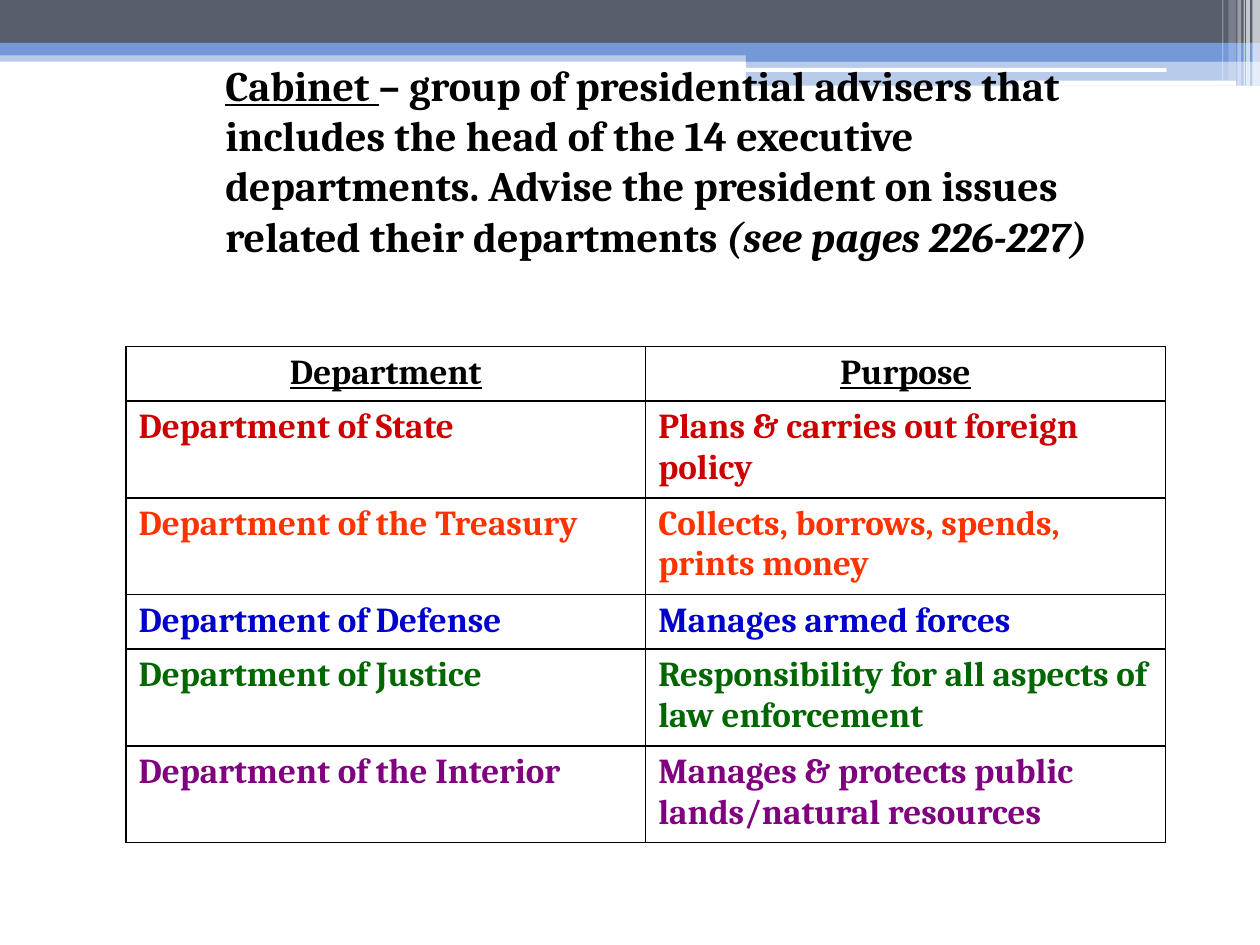
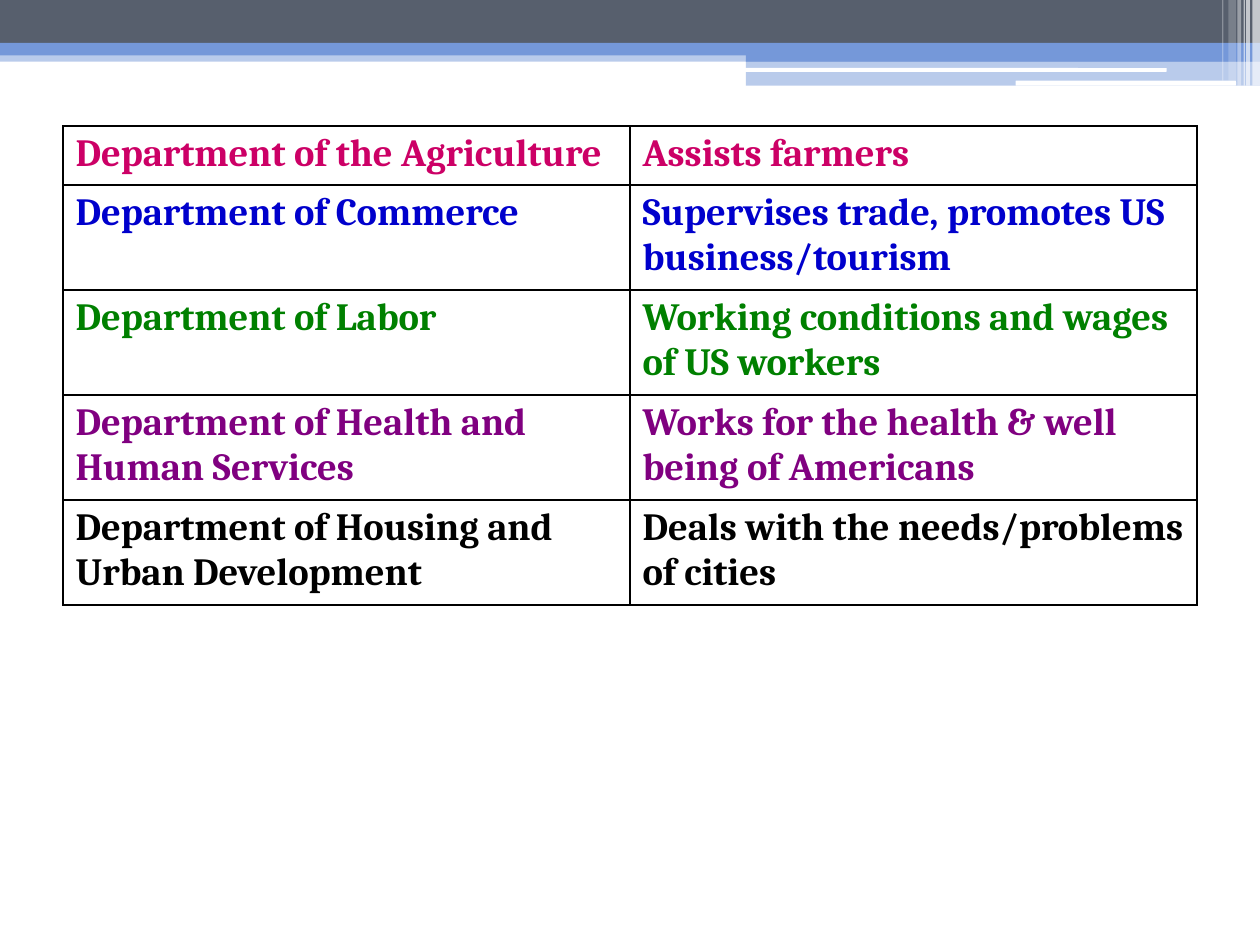
"""Build two slides that list the cabinet departments and their purposes."""
from dataclasses import dataclass

from lxml.etree import SubElement
from pptx import Presentation
from pptx.dml.color import RGBColor
from pptx.enum.shapes import MSO_SHAPE as Preset
from pptx.enum.text import MSO_ANCHOR as Anchor, PP_ALIGN as Align
from pptx.oxml.ns import qn
from pptx.slide import Slide
from pptx.table import _Cell as Cell
from pptx.text.text import _Paragraph as Paragraph
from pptx.util import Pt

FONT = "Cambria"
PAGE_WIDTH, PAGE_HEIGHT = 720, 540
ROW_HEIGHT = 26.64
COLORS = {
    "slate": "575F6D", "blue": "7598D9", "white": "FFFFFF", "black": "000000",
    "red": "CC0000", "orange": "FF3300", "navy": "0000CC", "forest": "006600",
    "purple": "800080", "pink": "CC0066", "green": "008000",
}


@dataclass(frozen=True)
class Band:
    left: float
    top: float
    width: float
    height: float
    color: str = "white"
    opacity: int = 100
    rounded: bool = False


@dataclass(frozen=True)
class Span:
    text: str
    size: float
    color: str = "black"
    underline: bool = False
    italic: bool = False


@dataclass(frozen=True)
class Department:
    name: str
    purpose: str
    color: str
    heading: bool = False


@dataclass(frozen=True)
class Grid:
    left: float
    top: float
    width: float
    size: float
    rows: tuple[Department, ...]


BANDS = (
    Band(0, 28.8, PAGE_WIDTH, 6.48, "blue", 50),
    Band(0, 0, PAGE_WIDTH, 24.48, "slate"),
    Band(0, 24.48, PAGE_WIDTH, 7.2, "blue"),
    Band(426.24, 28.08, 293.76, 7.2, "blue"),
    Band(426.24, 34.56, 293.76, 14.4, "blue", 50),
    Band(425.52, 38.88, 241.2, 2.16, rounded=True),
    Band(580.32, 46.08, 126, 2.88, rounded=True),
    Band(715.68, 0, 4.32, 48.96, opacity=65),
    Band(712.08, 0, 2.16, 48.96, opacity=65),
    Band(710.64, 0, 0.72, 48.96, opacity=60),
    Band(707.04, 0, 2.16, 48.96, opacity=40),
    Band(702, 0, 4.32, 46.08, opacity=20),
    Band(698.4, 0, 0.72, 46.08, opacity=30),
)
DEFINITION = (
    Span("Cabinet ", 24, underline=True),
    Span("– group of presidential advisers that includes the head of the 14 executive "
         "departments. Advise the president on issues related their departments ", 24),
    Span("(see pages 226-227)", 24, italic=True),
)
FIRST_GRID = Grid(72, 198, 594, 20, (
    Department("Department", "Purpose", "black", heading=True),
    Department("Department of State", "Plans & carries out foreign policy", "red"),
    Department("Department of the Treasury", "Collects, borrows, spends, prints money", "orange"),
    Department("Department of Defense", "Manages armed forces", "navy"),
    Department("Department of Justice", "Responsibility for all aspects of law enforcement", "forest"),
    Department("Department of the Interior", "Manages & protects public lands/natural resources", "purple"),
))
SECOND_GRID = Grid(36, 72, 648, 22, (
    Department("Department of the Agriculture", "Assists farmers", "pink"),
    Department("Department of Commerce", "Supervises trade, promotes US business/tourism", "navy"),
    Department("Department of Labor", "Working conditions and wages of US workers", "green"),
    Department("Department of Health and Human Services", "Works for the health & well being of Americans", "purple"),
    Department("Department of Housing and Urban Development", "Deals with the needs/problems of cities", "black"),
))


def rgb(name: str) -> RGBColor:
    """Look up a named colour."""
    return RGBColor.from_string(COLORS[name])


def add_span(para: Paragraph, span: Span) -> None:
    """Append one bold run to a paragraph."""
    run = para.add_run()
    run.text = span.text
    font = run.font
    font.name, font.size, font.bold = FONT, Pt(span.size), True
    font.underline, font.italic = span.underline, span.italic
    font.color.rgb = rgb(span.color)


def add_band(page: Slide, band: Band) -> None:
    """Draw one strip of the header."""
    preset = Preset.ROUNDED_RECTANGLE if band.rounded else Preset.RECTANGLE
    shape = page.shapes.add_shape(
        preset, Pt(band.left), Pt(band.top), Pt(band.width), Pt(band.height))
    shape.shadow.inherit = False
    shape.line.fill.background()
    shape.fill.solid()
    shape.fill.fore_color.rgb = rgb(band.color)
    if band.opacity < 100:
        color = shape.fill._xPr.find(qn("a:solidFill"))[0]
        SubElement(color, qn("a:alpha"), val=str(band.opacity * 1000))


def add_definition(page: Slide) -> None:
    """Write the indented definition of the cabinet."""
    box = page.shapes.add_textbox(Pt(49.68), Pt(30.24), Pt(616.32), Pt(152.64))
    frame = box.text_frame
    frame.word_wrap = True
    frame.vertical_anchor = Anchor.TOP
    para = frame.paragraphs[0]
    para._p.get_or_add_pPr().set("marL", str(Pt(72)))
    for span in DEFINITION:
        add_span(para, span)


def outline(cell: Cell) -> None:
    """Give a cell a black border and no fill."""
    properties = cell._tc.get_or_add_tcPr()
    for side in ("lnL", "lnR", "lnT", "lnB"):
        line = SubElement(properties, qn(f"a:{side}"), w=str(Pt(1)))
        fill = SubElement(line, qn("a:solidFill"))
        SubElement(fill, qn("a:srgbClr"), val=COLORS["black"])
    cell.fill.background()


def add_grid(page: Slide, grid: Grid) -> None:
    """Draw a two-column table of departments."""
    count = len(grid.rows)
    table = page.shapes.add_table(
        count, 2, Pt(grid.left), Pt(grid.top), Pt(grid.width), Pt(ROW_HEIGHT * count)).table
    table.first_row = table.horz_banding = False
    for row, department in zip(table.rows, grid.rows):
        row.height = Pt(ROW_HEIGHT)
        for cell, text in zip(row.cells, (department.name, department.purpose)):
            outline(cell)
            para = cell.text_frame.paragraphs[0]
            para.alignment = Align.CENTER if department.heading else Align.LEFT
            add_span(para, Span(text, grid.size, department.color, department.heading))


def main() -> None:
    """Build and save the deck."""
    deck = Presentation()
    deck.slide_width, deck.slide_height = Pt(PAGE_WIDTH), Pt(PAGE_HEIGHT)
    for grid in (FIRST_GRID, SECOND_GRID):
        page = deck.slides.add_slide(deck.slide_layouts[6])
        for band in BANDS:
            add_band(page, band)
        if grid is FIRST_GRID:
            add_definition(page)
        add_grid(page, grid)
    deck.save("out.pptx")


if __name__ == "__main__":
    main()
